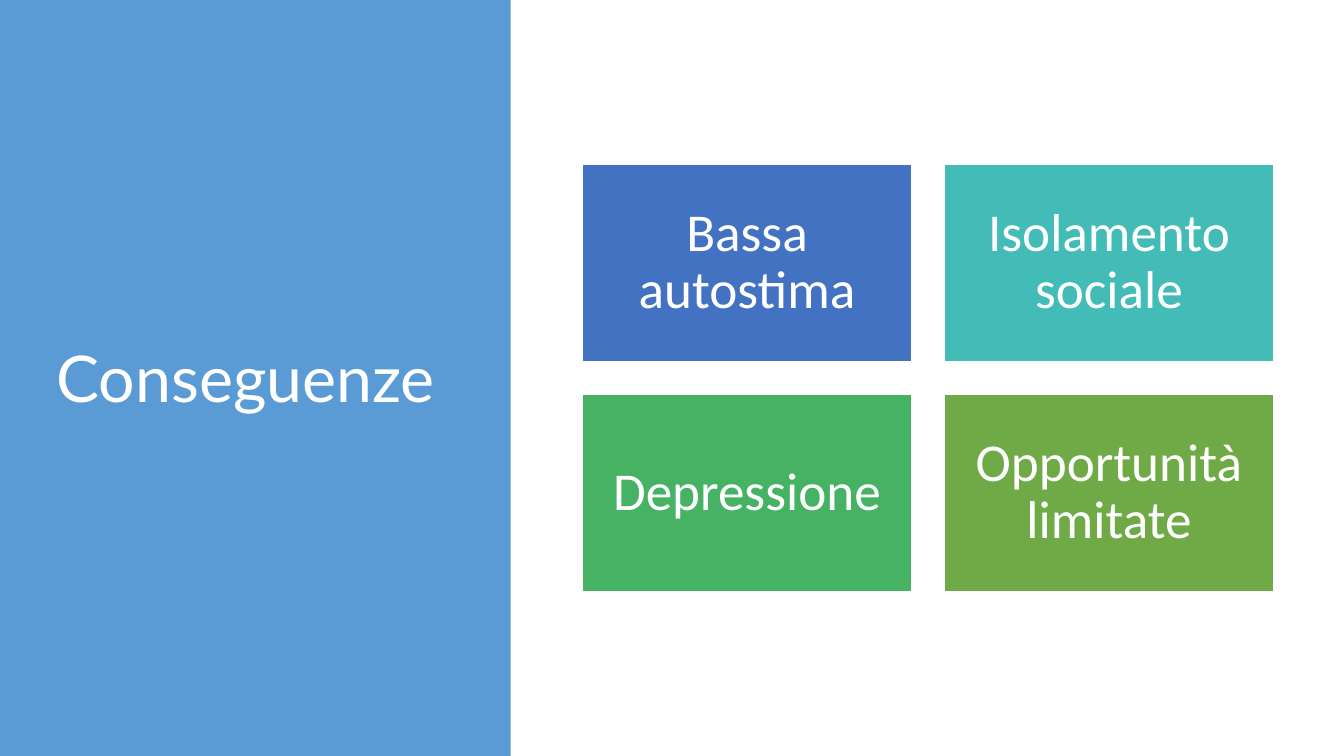
from dataclasses import dataclass

from pptx import Presentation
from pptx.dml.color import RGBColor
from pptx.enum.shapes import MSO_SHAPE as Preset
from pptx.enum.text import MSO_ANCHOR as Anchor, PP_ALIGN as Align
from pptx.shapes.autoshape import Shape
from pptx.shapes.shapetree import GroupShapes
from pptx.slide import Slide
from pptx.text.text import TextFrame
from pptx.util import Inches, Pt

SLIDE_WIDTH, SLIDE_HEIGHT = 13.33, 7.5
PANEL_SHARE = 0.38

GRID_LEFT, GRID_TOP = 5.78, 1.63
CARD_WIDTH, CARD_HEIGHT = 3.26, 1.96
COLUMN_STEP, ROW_STEP = 3.59, 2.28

WHITE = RGBColor(0xFF, 0xFF, 0xFF)
SKY = RGBColor(0x5B, 0x9B, 0xD5)
BLUE = RGBColor(0x43, 0x72, 0xC3)
TEAL = RGBColor(0x43, 0xBC, 0xB8)
GREEN = RGBColor(0x45, 0xB3, 0x63)
OLIVE = RGBColor(0x6F, 0xAA, 0x47)


@dataclass(frozen=True)
class Consequence:
    label: str
    column: int
    row: int
    color: RGBColor


CONSEQUENCES = (
    Consequence("Bassa autostima", 0, 0, BLUE),
    Consequence("Isolamento sociale", 1, 0, TEAL),
    Consequence("Depressione", 0, 1, GREEN),
    Consequence("Opportunità limitate", 1, 1, OLIVE),
)


def write(frame: TextFrame, text: str, font_name: str, size: float,
          align: Align, inset_x: float, inset_y: float) -> None:
    """Fill a frame with one white, vertically centred paragraph."""
    frame.word_wrap = True
    frame.vertical_anchor = Anchor.MIDDLE
    frame.margin_left = frame.margin_right = Inches(inset_x)
    frame.margin_top = frame.margin_bottom = Inches(inset_y)
    paragraph = frame.paragraphs[0]
    paragraph.alignment = align
    paragraph.line_spacing = 0.9
    run = paragraph.add_run()
    run.text = text
    run.font.name = font_name
    run.font.size = Pt(size)
    run.font.color.rgb = WHITE


def add_block(shapes: GroupShapes, left: float, top: float, width: float,
              height: float, color: RGBColor) -> Shape:
    block = shapes.add_shape(Preset.RECTANGLE, Inches(left), Inches(top),
                             Inches(width), Inches(height))
    block.shadow.inherit = False
    block.fill.solid()
    block.fill.fore_color.rgb = color
    return block


def add_title_panel(slide: Slide) -> None:
    panel = add_block(slide.shapes, 0, 0, SLIDE_WIDTH * PANEL_SHARE,
                      SLIDE_HEIGHT, SKY)
    panel.line.fill.background()
    title = slide.shapes.title
    title.element.addprevious(panel.element)
    title.left, title.top = Inches(0.46), Inches(0.78)
    title.width, title.height = Inches(4.26), Inches(6.02)
    write(title.text_frame, "Conseguenze", "Lato", 46, Align.LEFT, 0.1, 0.05)


def add_card(shapes: GroupShapes, consequence: Consequence) -> None:
    card = add_block(shapes, GRID_LEFT + consequence.column * COLUMN_STEP,
                     GRID_TOP + consequence.row * ROW_STEP,
                     CARD_WIDTH, CARD_HEIGHT, consequence.color)
    card.line.color.rgb = WHITE
    card.line.width = Pt(1)
    write(card.text_frame, consequence.label, "Calibri", 38, Align.CENTER,
          0.16, 0.16)


def main() -> None:
    presentation = Presentation()
    presentation.slide_width = Inches(SLIDE_WIDTH)
    presentation.slide_height = Inches(SLIDE_HEIGHT)
    slide = presentation.slides.add_slide(presentation.slide_layouts[5])
    add_title_panel(slide)
    cards = slide.shapes.add_group_shape()
    for consequence in CONSEQUENCES:
        add_card(cards.shapes, consequence)
    presentation.save("out.pptx")


if __name__ == "__main__":
    main()
